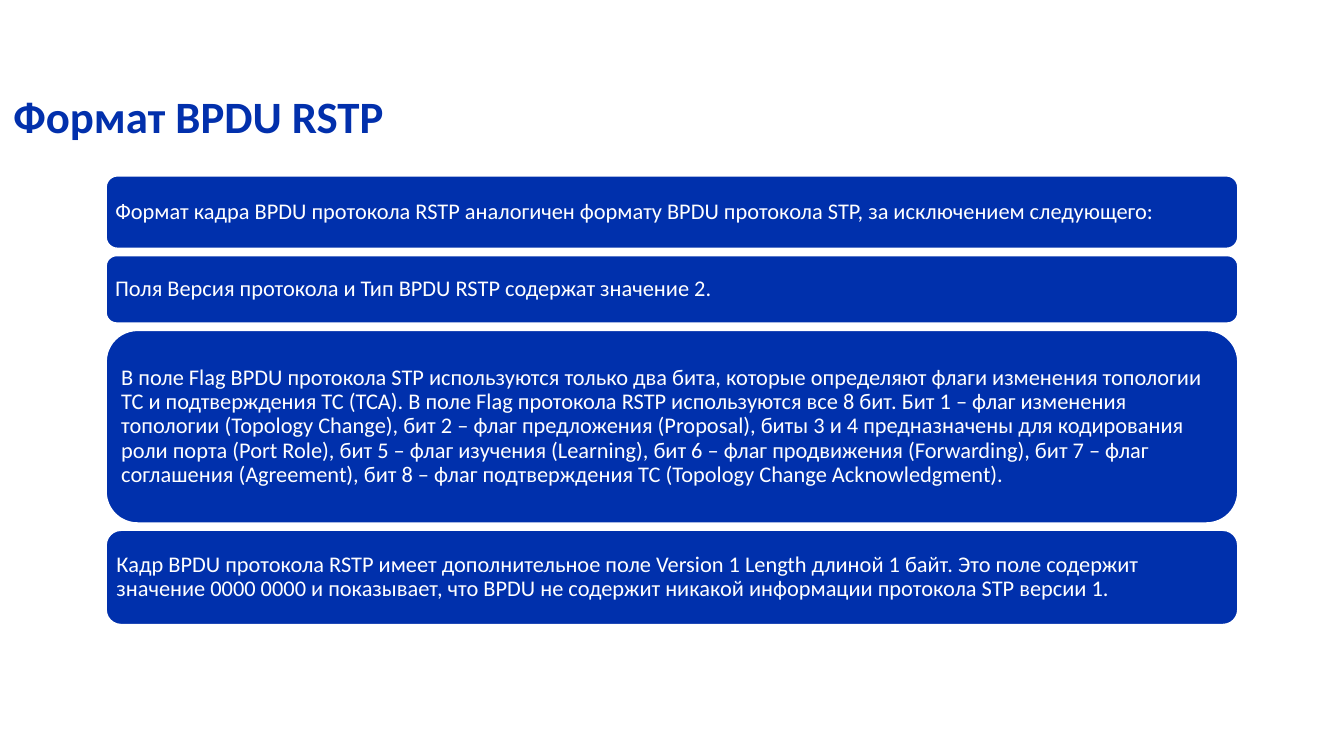
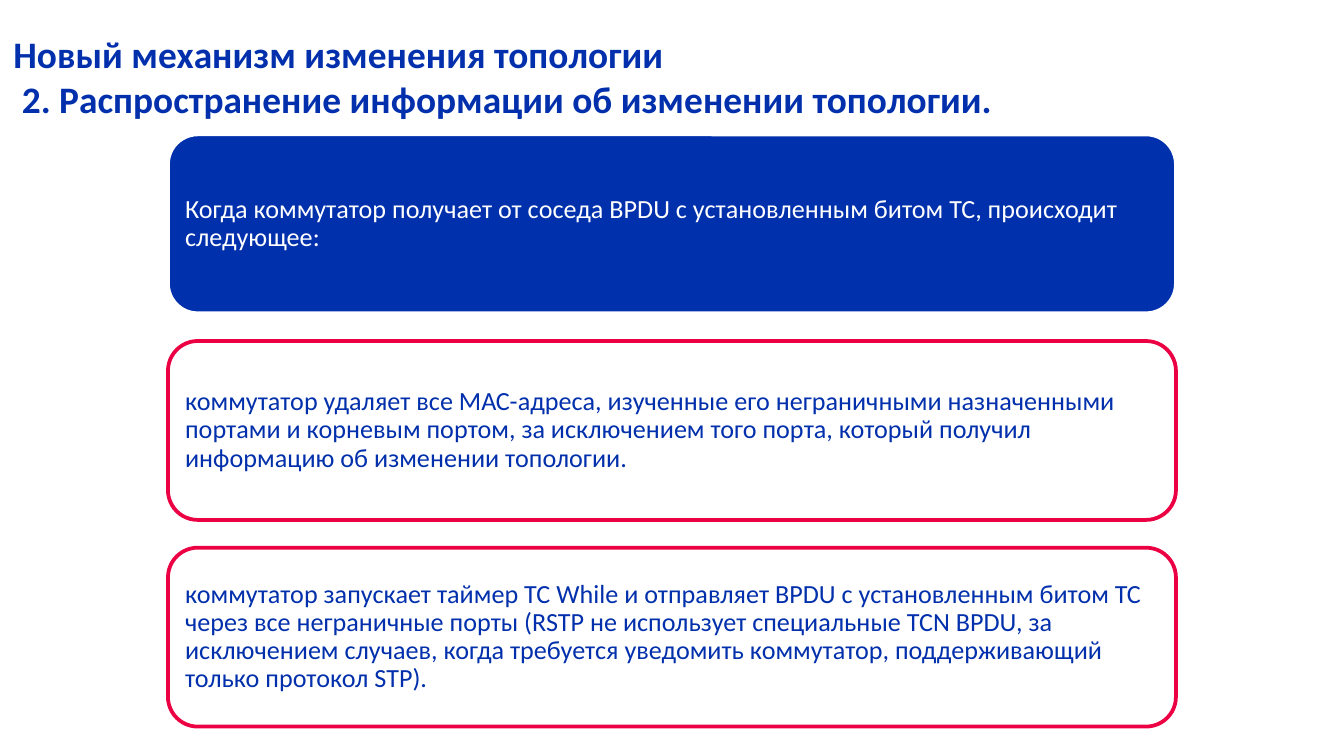
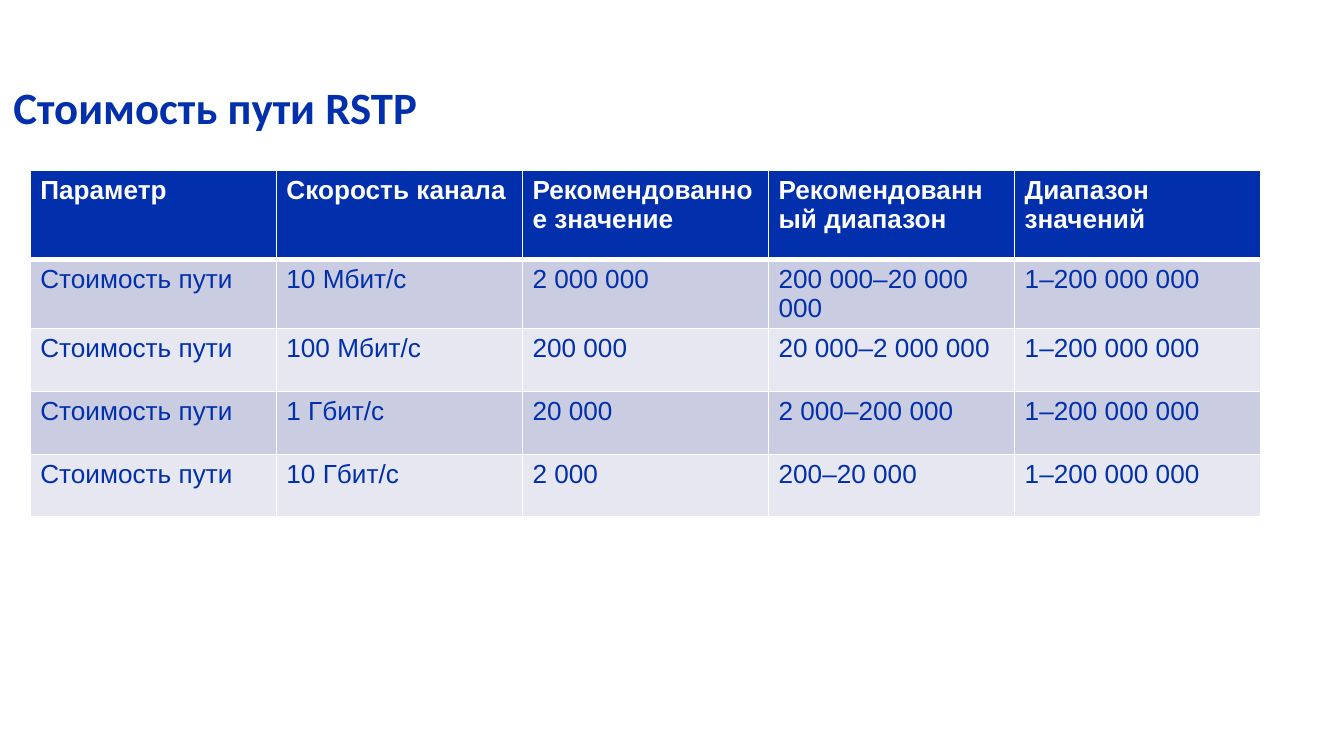
from pptx import Presentation
from pptx import util as u
from pptx.dml.color import RGBColor
from pptx.enum import shapes, text
from pptx.oxml import parse_xml
from pptx.oxml.ns import nsdecls

PX = 5715
BLUE = RGBColor(0x00, 0x30, 0xAC)
INK = RGBColor(0x02, 0x30, 0xAC)
RED = RGBColor(0xEC, 0x00, 0x44)
WHITE = RGBColor(0xFF, 0xFF, 0xFF)
BANDS = [RGBColor(0xCA, 0xCC, 0xE2), RGBColor(0xE6, 0xE7, 0xF1)]
SOLID = dict(fill=BLUE, line=WHITE, color=WHITE)
OUTLINED = dict(fill=WHITE, line=RED, color=INK)

FORMAT = dict(
    title="Формат BPDU RSTP", title_box=(0, 98, 1283, 232), title_size=24, anchor="TOP",
    left=125, top=208, width=1350, gap=6, size=12, inset=8,
    cards=[
        (89, SOLID, "Формат кадра BPDU протокола RSTP аналогичен формату BPDU протокола STP, "
                    "за исключением следующего:"),
        (83, SOLID, "Поля Версия протокола и Тип BPDU RSTP содержат значение 2."),
        (232, SOLID, "В поле Flag BPDU протокола STP используются только два бита, которые "
                     "определяют флаги изменения топологии TC и подтверждения TC (TCA). В поле "
                     "Flag протокола RSTP используются все 8 бит. Бит 1 – флаг изменения "
                     "топологии (Topology Change), бит 2 – флаг предложения (Proposal), биты 3 "
                     "и 4 предназначены для кодирования роли порта (Port Role), бит 5 – флаг "
                     "изучения (Learning), бит 6 – флаг продвижения (Forwarding), бит 7 – флаг "
                     "соглашения (Agreement), бит 8 – флаг подтверждения TC (Topology Change "
                     "Acknowledgment)."),
        (115, SOLID, "Кадр BPDU протокола RSTP имеет дополнительное поле Version 1 Length длиной "
                     "1 байт. Это поле содержит значение 0000 0000 и показывает, что BPDU не "
                     "содержит никакой информации протокола STP версии 1."),
    ])

TOPOLOGY = dict(
    title="Новый механизм изменения топологии\v"
          " 2. Распространение информации об изменении топологии.",
    title_box=(0, -13, 1453, 208), title_size=20, anchor="MIDDLE",
    left=200, top=160, width=1200, gap=33, size=14, inset=10,
    cards=[
        (213, SOLID, "Когда коммутатор получает от соседа BPDU с установленным битом ТС, "
                     "происходит следующее:"),
        (213, OUTLINED, "коммутатор удаляет все МАС-адреса, изученные его неграничными "
                        "назначенными портами и корневым портом, за исключением того порта, "
                        "который получил информацию об изменении топологии."),
        (213, OUTLINED, "коммутатор запускает таймер TC While и отправляет BPDU с установленным "
                        "битом ТС через все неграничные порты (RSTP не использует специальные "
                        "TCN BPDU, за исключением случаев, когда требуется уведомить коммутатор, "
                        "поддерживающий только протокол STP)."),
    ])

COST = dict(title="Стоимость пути RSTP", title_box=(0, 52, 1080, 150), title_size=24,
            anchor="MIDDLE")
COST_HEADER = ["Параметр", "Скорость канала", "Рекомендованное значение",
               "Рекомендованный диапазон", "Диапазон значений"]
COST_ROWS = [
    ("10 Мбит/с", "2 000 000", "200 000–20 000 000"),
    ("100 Мбит/с", "200 000", "20 000–2 000 000"),
    ("1 Гбит/с", "20 000", "2 000–200 000"),
    ("10 Гбит/с", "2 000", "200–20 000"),
]
COL_W, HEAD_H, ROW_H = 293, 106, 75


def emu(*lengths):
    return [n * PX for n in lengths]


def put_text(tf, txt, *, size, color, font="Calibri", bold=False, spacing=None):
    tf.word_wrap = True
    p = tf.paragraphs[0]
    p.text = txt
    p.alignment = text.PP_ALIGN.LEFT
    if spacing:
        p.line_spacing = spacing
    for r in p.runs:
        r.font.name, r.font.size, r.font.bold = font, u.Pt(size), bold
        r.font.color.rgb = color


def set_margins(box, x, y):
    box.margin_left = box.margin_right = x * PX
    box.margin_top = box.margin_bottom = y * PX


def add_titled_slide(prs, page):
    s = prs.slides.add_slide(prs.slide_layouts[5])
    title = s.shapes.title
    title.left, title.top, title.width, title.height = emu(*page["title_box"])
    tf = title.text_frame
    tf.auto_size = text.MSO_AUTO_SIZE.NONE
    tf.vertical_anchor = text.MSO_ANCHOR[page["anchor"]]
    set_margins(tf, 16, 8)
    put_text(tf, page["title"], size=page["title_size"], color=INK, bold=True)
    return s


def add_cards(s, page):
    top = page["top"]
    for height, style, txt in page["cards"]:
        sp = s.shapes.add_shape(shapes.MSO_SHAPE.ROUNDED_RECTANGLE,
                                *emu(page["left"], top, page["width"], height))
        sp.shadow.inherit = False
        sp.fill.solid()
        sp.fill.fore_color.rgb = style["fill"]
        sp.line.color.rgb = style["line"]
        sp.line.width = u.Pt(2)
        tf = sp.text_frame
        tf.vertical_anchor = text.MSO_ANCHOR.MIDDLE
        set_margins(tf, page["inset"], page["inset"])
        put_text(tf, txt, size=page["size"], color=style["color"], spacing=0.9)
        top += height + page["gap"]


def set_borders(cell, **widths):
    for side in "LRTB":
        width = u.Pt(widths.get(side, 1))
        cell._tc.get_or_add_tcPr().append(parse_xml(
            f'<a:ln{side} {nsdecls("a")} w="{width}"><a:solidFill>'
            f'<a:srgbClr val="{WHITE}"/></a:solidFill></a:ln{side}>'))


def add_cost_table(s):
    rows = [COST_HEADER] + [("Стоимость пути", *row, "1–200 000 000") for row in COST_ROWS]
    heights = [HEAD_H] + [ROW_H] * len(COST_ROWS)
    n = len(COST_HEADER)
    table = s.shapes.add_table(len(rows), n, *emu(36, 203, COL_W * n, sum(heights))).table
    for col in table.columns:
        col.width = COL_W * PX
    for i, values in enumerate(rows):
        table.rows[i].height = heights[i] * PX
        head = i == 0
        for j, value in enumerate(values):
            cell = table.cell(i, j)
            set_margins(cell, 12, 6)
            set_borders(cell, T=3 if i == 1 else 1, B=3 if head else 1)
            cell.fill.solid()
            cell.fill.fore_color.rgb = INK if head else BANDS[(i - 1) % 2]
            put_text(cell.text_frame, value, size=14, font="Arial", bold=head,
                     color=WHITE if head else INK)


def main():
    prs = Presentation()
    prs.slide_width, prs.slide_height = emu(1600, 900)
    for page in (FORMAT, TOPOLOGY):
        add_cards(add_titled_slide(prs, page), page)
    add_cost_table(add_titled_slide(prs, COST))
    prs.save("out.pptx")


if __name__ == "__main__":
    main()
